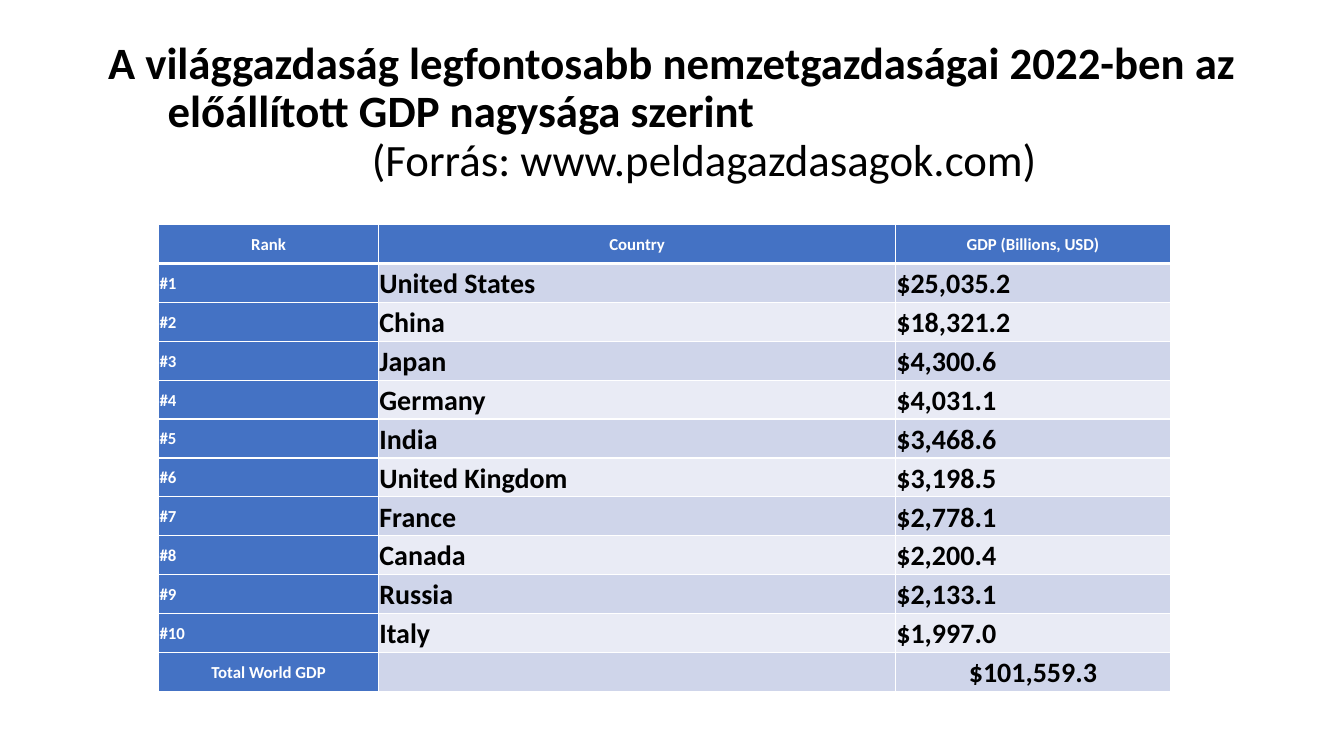
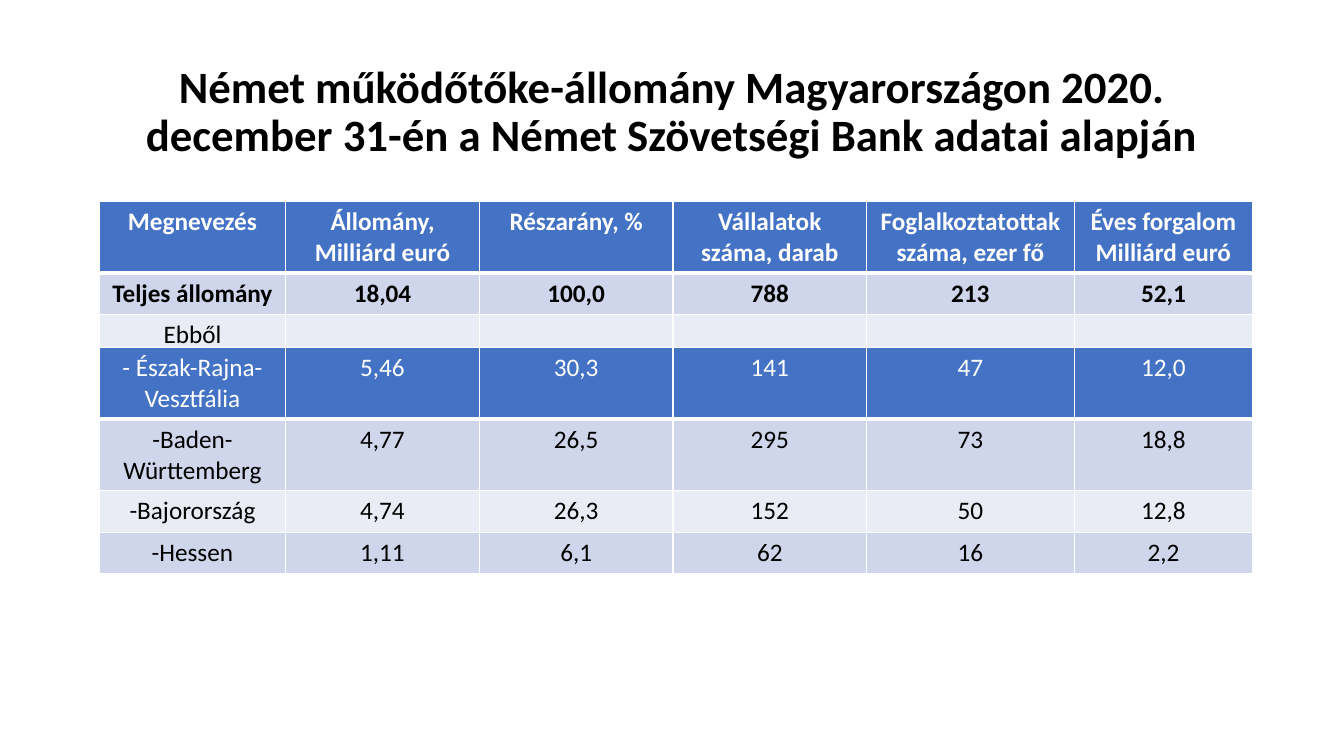
"""Two slides of economic tables: largest economies by GDP and German capital in Hungary."""
import dataclasses

import lxml.etree
import pptx
import pptx.dml.color
import pptx.enum.text
import pptx.oxml.ns
import pptx.util

Cm = pptx.util.Cm
Pt = pptx.util.Pt
Align = pptx.enum.text.PP_ALIGN
Anchor = pptx.enum.text.MSO_ANCHOR
qn = pptx.oxml.ns.qn


@dataclasses.dataclass(frozen=True)
class Theme:
    font: str = "Calibri"
    text: str = "000000"
    white: str = "FFFFFF"
    accent: str = "4472C4"
    bands: tuple = ("CFD5EA", "E9EBF5")
    title_size: int = 32
    label_size: int = 12
    value_size: int = 20
    body_size: int = 18
    thin: int = 1
    thick: int = 3


theme = Theme()


def write(para, text, size, colour, bold, **paragraph_format):
    for name, value in paragraph_format.items():
        setattr(para, name, value)
    if not text:
        return
    span = para.add_run()
    span.text = text
    font_format = {"name": theme.font, "size": Pt(size), "bold": bold}
    for name, value in font_format.items():
        setattr(span.font, name, value)
    span.font.color.rgb = pptx.dml.color.RGBColor.from_string(colour)


def draw_table(page, left, top, widths, heights, rows, sizes, bold_rows,
               centred_rows, key_column=False, cell_format=None, spacing=1.0):
    frame = page.shapes.add_table(len(rows), len(widths), Cm(left), Cm(top),
                                  Cm(sum(widths)), Cm(sum(heights)))
    table = frame.table
    table.first_row = table.horz_banding = False
    for column, width in zip(table.columns, widths):
        column.width = Cm(width)
    for row, (line, height) in enumerate(zip(rows, heights)):
        table.rows[row].height = Cm(height)
        for col, text in enumerate(line):
            cell = table.cell(row, col)
            for name, value in (cell_format or {}).items():
                setattr(cell, name, value)
            is_label = row == 0 or (key_column and col == 0)
            edges = {"lnL": theme.thin, "lnR": theme.thin,
                     "lnT": theme.thick if row == 1 else theme.thin,
                     "lnB": theme.thick if row == 0 else theme.thin}
            properties = cell._tc.get_or_add_tcPr()
            for edge, width in edges.items():
                border = lxml.etree.SubElement(properties, qn(f"a:{edge}"), w=str(Pt(width)))
                paint = lxml.etree.SubElement(border, qn("a:solidFill"))
                lxml.etree.SubElement(paint, qn("a:srgbClr"), val=theme.white)
            fill = theme.accent if is_label else theme.bands[(row - 1) % 2]
            cell.fill.solid()
            cell.fill.fore_color.rgb = pptx.dml.color.RGBColor.from_string(fill)
            write(cell.text_frame.paragraphs[0], text,
                  sizes[0] if is_label else sizes[1],
                  theme.white if is_label else theme.text,
                  row in bold_rows, line_spacing=spacing,
                  alignment=Align.CENTER if row in centred_rows else Align.LEFT)


economies = [
    ("United States", "$25,035.2"), ("China", "$18,321.2"), ("Japan", "$4,300.6"),
    ("Germany", "$4,031.1"), ("India", "$3,468.6"), ("United Kingdom", "$3,198.5"),
    ("France", "$2,778.1"), ("Canada", "$2,200.4"), ("Russia", "$2,133.1"),
    ("Italy", "$1,997.0"),
]
gdp_rows = [("Rank", "Country", "GDP (Billions, USD)")]
gdp_rows += [(f"#{rank}", *economy) for rank, economy in enumerate(economies, 1)]
gdp_rows += [("Total World GDP", "", "$101,559.3")]

total_rows = [
    ("Megnevezés", "Állomány, Milliárd euró", "Részarány, %", "Vállalatok száma, darab",
     "Foglalkoztatottak száma, ezer fő", "Éves forgalom Milliárd euró"),
    ("Teljes állomány", "18,04", "100,0", "788", "213", "52,1"),
    ("Ebből", "", "", "", "", ""),
]
state_rows = [
    ("- Észak-Rajna-Vesztfália", "5,46", "30,3", "141", "47", "12,0"),
    ("-Baden-Württemberg", "4,77", "26,5", "295", "73", "18,8"),
    ("-Bajorország", "4,74", "26,3", "152", "50", "12,8"),
    ("-Hessen", "1,11", "6,1", "62", "16", "2,2"),
]
titles = [
    [("A világgazdaság legfontosabb nemzetgazdaságai 2022-ben az előállított GDP nagysága szerint",
      True, Align.LEFT),
     ("(Forrás: www.peldagazdasagok.com)", False, Align.CENTER)],
    [("Német működőtőke-állomány Magyarországon 2020. december 31-én "
      "a Német Szövetségi Bank adatai alapján", True, Align.CENTER)],
]

deck = pptx.Presentation()
deck.slide_width, deck.slide_height = Cm(33.87), Cm(19.05)
title_box = {"left": Cm(2.33), "top": Cm(1.01), "width": Cm(29.21), "height": Cm(3.68)}
title_frame = {"word_wrap": True, "vertical_anchor": Anchor.MIDDLE,
               "auto_size": pptx.enum.text.MSO_AUTO_SIZE.NONE}

pages = []
for lines in titles:
    page = deck.slides.add_slide(deck.slide_layouts[5])
    box = page.shapes.title
    for target, settings in ((box, title_box), (box.text_frame, title_frame)):
        for name, value in settings.items():
            setattr(target, name, value)
    for number, (text, bold, alignment) in enumerate(lines):
        para = box.text_frame.add_paragraph() if number else box.text_frame.paragraphs[0]
        write(para, text, theme.title_size, theme.text, bold,
              alignment=alignment, line_spacing=0.9)
        if alignment == Align.LEFT:
            indents = para._p.get_or_add_pPr()
            indents.set("marL", str(Cm(1.64)))
            indents.set("indent", str(Cm(-1.5)))
    pages.append(page)

gdp_page, capital_page = pages
tight_cell = {"vertical_anchor": Anchor.MIDDLE}
tight_cell.update({f"margin_{side}": Cm(0.02) for side in ("left", "right", "top", "bottom")})
draw_table(gdp_page, 4, 5.66, (5.54, 13.03, 6.93), [0.98] * len(gdp_rows), gdp_rows,
           sizes=(theme.label_size, theme.value_size), bold_rows=range(len(gdp_rows)),
           centred_rows=(0, len(gdp_rows) - 1), key_column=True,
           cell_format=tight_cell, spacing=1.07)

one_line, two_lines = 1.04, 1.78
capital_tables = [
    (5.08, (two_lines, one_line, one_line), total_rows, (0, 1)),
    (8.76, (two_lines, two_lines, one_line, one_line), state_rows, ()),
]
for top, heights, rows, bold_rows in capital_tables:
    draw_table(capital_page, 2.5, top, (4.7, 4.88, 4.88, 4.88, 5.23, 4.5), heights, rows,
               sizes=(theme.body_size, theme.body_size), bold_rows=bold_rows,
               centred_rows=range(len(rows)))

deck.save("out.pptx")
